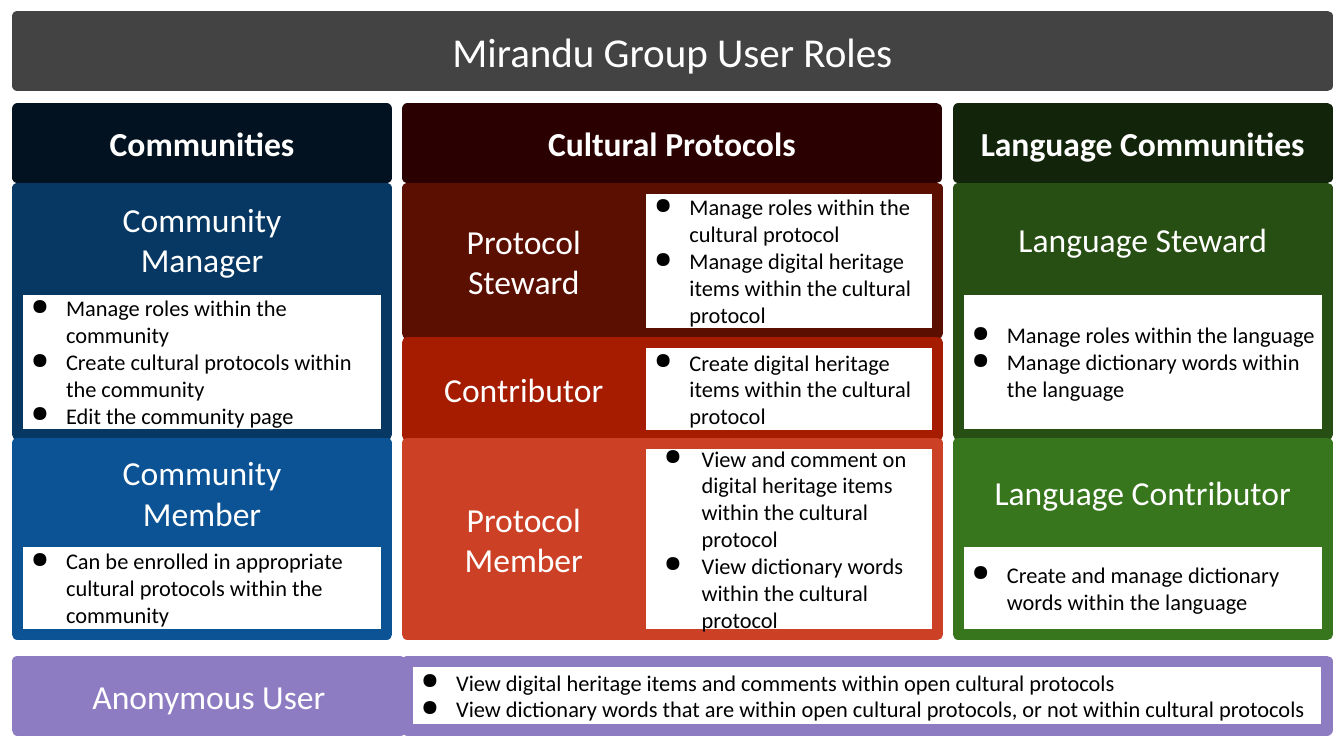
from pptx import Presentation, util as u
from pptx.dml.color import RGBColor
from pptx.enum import shapes, text
from pptx.oxml.ns import qn
from lxml import etree

FONT = "Calibri"
WHITE, BLACK = "FFFFFF", "000000"
NARROW, WIDE = 0.1, 0.18  # text insets in cm


def colour(value):
    return RGBColor.from_string(value)


class RolesPage:
    def __init__(self, deck):
        self.page = deck.slides.add_slide(deck.slide_layouts[6])

    def box(self, place, line, fill, insets):
        """Rectangle with a thick round-cornered border; fill may be None."""
        box = self.page.shapes.add_shape(
            shapes.MSO_SHAPE.RECTANGLE, *(u.Cm(n) for n in place))
        box.shadow.inherit = False
        if fill:
            box.fill.solid()
            box.fill.fore_color.rgb = colour(fill)
        else:
            box.fill.background()
        box.line.color.rgb = colour(line)
        box.line.width = u.Pt(6)
        border = box._element.spPr.find(qn("a:ln"))
        etree.SubElement(border, qn("a:round"))
        frame = box.text_frame
        frame.word_wrap = True
        frame.vertical_anchor = text.MSO_ANCHOR.MIDDLE
        (frame.margin_left, frame.margin_top,
         frame.margin_right, frame.margin_bottom) = (u.Cm(n) for n in insets)
        return frame

    def fill_text(self, frame, lines, size, ink, align, bold=False):
        for number, line in enumerate(lines):
            para = frame.add_paragraph() if number else frame.paragraphs[0]
            para.text = line
            para.alignment = align
            para.font.name = FONT
            para.font.size = u.Pt(size)
            para.font.bold = bold
            para.font.color.rgb = colour(ink)

    def label(self, place, fill, lines, size=18, bold=False, side=NARROW):
        frame = self.box(place, fill, fill, (side, NARROW, side, NARROW))
        self.fill_text(frame, lines, size, WHITE, text.PP_ALIGN.CENTER, bold)

    def bullets(self, place, line, items, indent=0.74, hang=0.66):
        frame = self.box(place, line, None, (WIDE, NARROW, NARROW, NARROW))
        self.fill_text(frame, items, 12, BLACK, text.PP_ALIGN.LEFT)
        for para in frame.paragraphs:
            props = para._p.get_or_add_pPr()
            props.set("marL", str(u.Cm(indent)))
            props.set("indent", str(-u.Cm(hang)))
            ink = etree.SubElement(props, qn("a:buClr"))
            etree.SubElement(ink, qn("a:srgbClr"), val=BLACK)
            etree.SubElement(props, qn("a:buChar"), char="●")
            # bullet properties come before the default run properties
            props.append(props.find(qn("a:defRPr")))


# Columns: left and width in cm
COMMUNITY, LANGUAGE = (0.33, 6.98), (18.11, 6.98)
PROTOCOL, ROLE, DUTIES = (7.7, 10), (7.7, 4.4), (12.11, 5.61)

# Rows: top and height in cm
HEADER, FOOTER = (2.06, 1.3), (12.5, 1.3)
UPPER_ROLE, UPPER_DUTIES = (3.56, 1.92), (5.47, 2.74)
LOWER_ROLE, LOWER_DUTIES = (8.38, 1.86), (10.24, 1.75)

HEADERS = [
    (COMMUNITY, "031221", "Communities"),
    (PROTOCOL, "2B0000", "Cultural Protocols"),
    (LANGUAGE, "122409", "Language Communities"),
]

# Role above its duties
STACKED = [
    (COMMUNITY, UPPER_ROLE, UPPER_DUTIES, "073763", ["Community", "Manager"],
     ["Manage roles within the community",
      "Create cultural protocols within the community",
      "Edit the community page"]),
    (COMMUNITY, LOWER_ROLE, LOWER_DUTIES, "0B5394", ["Community", "Member"],
     ["Can be enrolled in appropriate cultural protocols within the community"]),
    (LANGUAGE, UPPER_ROLE, UPPER_DUTIES, "274E13", ["Language Steward"],
     ["Manage roles within the language",
      "Manage dictionary words within the language"]),
    (LANGUAGE, LOWER_ROLE, LOWER_DUTIES, "38761D", ["Language Contributor"],
     ["Create and manage dictionary words within the language"]),
]

# Role beside its duties: row, colour, role, duties, bullet indents
BESIDE = [
    ((3.56, 2.74), "5B0F00", ["Protocol", "Steward"],
     ["Manage roles within the cultural protocol",
      "Manage digital heritage items within the cultural protocol"], (0.74, 0.66)),
    ((6.48, 1.75), "A61C00", ["Contributor"],
     ["Create digital heritage items within the cultural protocol"], (0.74, 0.66)),
    ((8.38, 3.61), "CC4125", ["Protocol Member"],
     ["View and comment on digital heritage items within the cultural protocol",
      "View dictionary words within the cultural protocol"], (0.97, 0.71)),
]


def place(column, row):
    return column[0], row[0], column[1], row[1]


def main():
    deck = Presentation()
    deck.slide_width, deck.slide_height = u.Cm(25.4), u.Cm(13.97)
    roles = RolesPage(deck)

    # Title and column headers
    roles.label((0.33, 0.31, 24.76, 1.31), "434343",
                ["Mirandu Group User Roles"], size=22, side=WIDE)
    for column, fill, name in HEADERS:
        roles.label(place(column, HEADER), fill, [name], bold=True, side=WIDE)

    # Communities and languages
    for column, role_row, duty_row, fill, role, duties in STACKED:
        roles.bullets(place(column, duty_row), fill, duties)
        roles.label(place(column, role_row), fill, role)

    # Cultural protocols
    for row, fill, role, duties, indents in BESIDE:
        roles.bullets(place(DUTIES, row), fill, duties, *indents)
        roles.label(place(ROLE, row), fill, role, side=WIDE)

    # Anonymous user
    violet = "8E7CC3"
    roles.label(place((0.33, 7.24), FOOTER), violet, ["Anonymous User"], side=WIDE)
    roles.bullets(place((7.7, 17.38), FOOTER), violet, [
        "View digital heritage items and comments within open cultural protocols",
        "View dictionary words that are within open cultural protocols, "
        "or not within cultural protocols"])

    deck.save("out.pptx")


if __name__ == "__main__":
    main()
